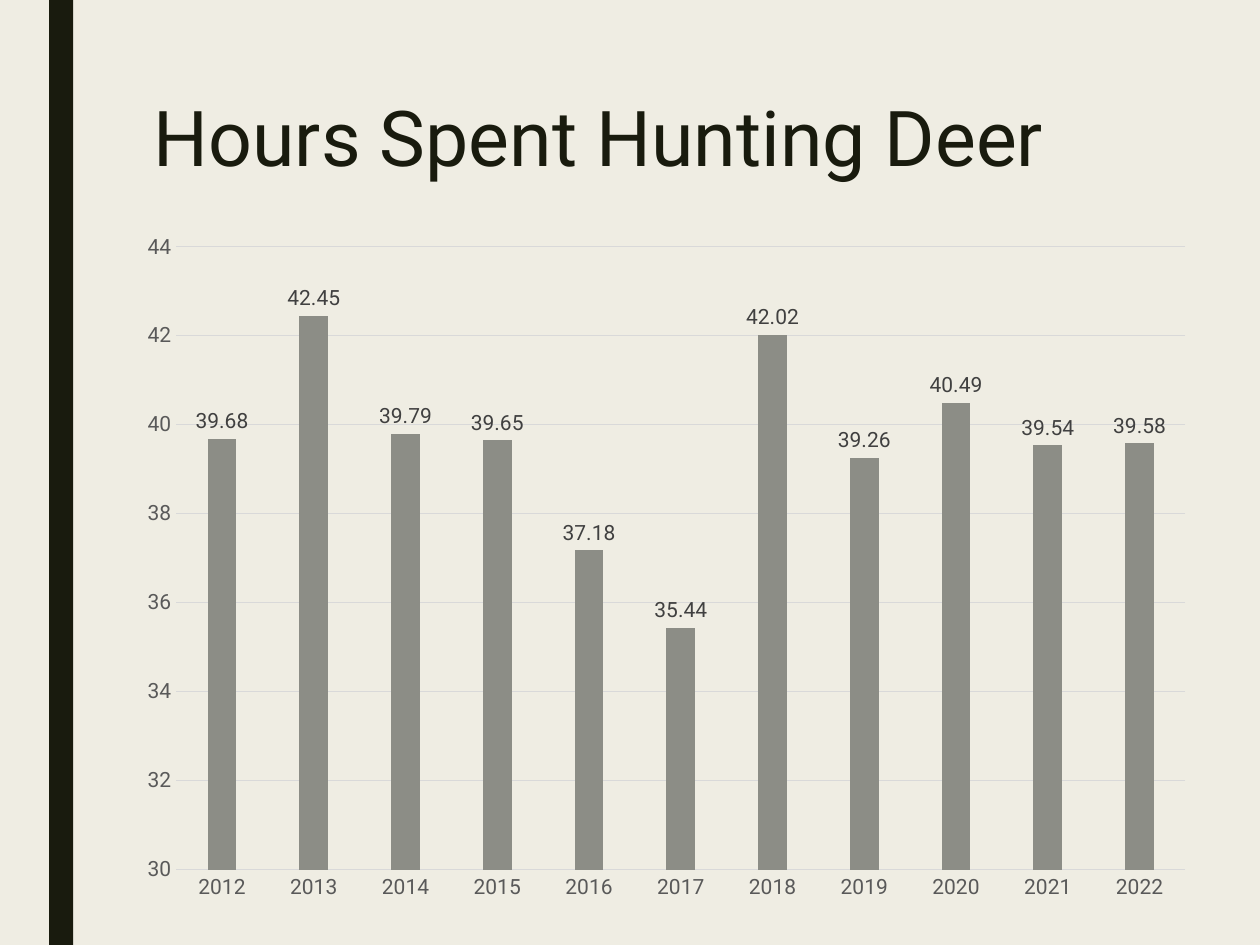
from dataclasses import dataclass

from pptx import Presentation
from pptx.chart.data import CategoryChartData
from pptx.dml.color import RGBColor
from pptx.enum.chart import XL_CHART_TYPE, XL_LABEL_POSITION, XL_TICK_MARK
from pptx.enum.shapes import MSO_SHAPE
from pptx.enum.text import MSO_ANCHOR, PP_ALIGN
from pptx.util import Inches, Pt

RECTANGLE = MSO_SHAPE.RECTANGLE
COLUMNS = XL_CHART_TYPE.COLUMN_CLUSTERED
OUTSIDE_END = XL_LABEL_POSITION.OUTSIDE_END
NO_TICK = XL_TICK_MARK.NONE
TITLE_ONLY = 5


@dataclass(frozen=True)
class Theme:
    font: str = "Roboto"
    background: RGBColor = RGBColor.from_string("EFEDE3")
    dark: RGBColor = RGBColor.from_string("191B0E")
    column: RGBColor = RGBColor.from_string("8C8D86")
    grid: RGBColor = RGBColor.from_string("D9D9D9")
    axis_text: RGBColor = RGBColor.from_string("595959")
    label_text: RGBColor = RGBColor.from_string("404040")
    black: RGBColor = RGBColor.from_string("000000")
    title_size: Pt = Pt(44)
    label_size: Pt = Pt(12)
    chart_size: Pt = Pt(10)
    grid_width: Pt = Pt(0.75)


THEME = Theme()

FIRST_YEAR = 2012
HOURS = [39.68, 42.45, 39.79, 39.65, 37.18, 35.44,
         42.02, 39.26, 40.49, 39.54, 39.58]


def box(left, top, width, height):
    return Inches(left), Inches(top), Inches(width), Inches(height)


def style_font(font, size, color):
    font.name = THEME.font
    font.size = size
    font.color.rgb = color
    font.bold = False


def style_line(line):
    line.color.rgb = THEME.grid
    line.width = THEME.grid_width


def add_stripe(page, bounds):
    stripe = page.shapes.add_shape(RECTANGLE, *bounds)
    stripe.shadow.inherit = False
    stripe.fill.solid()
    stripe.fill.fore_color.rgb = THEME.dark
    stripe.line.fill.background()


def set_title(page, bounds, text):
    title = page.shapes.title
    title.left, title.top, title.width, title.height = bounds
    frame = title.text_frame
    frame.text = text
    frame.word_wrap = True
    frame.vertical_anchor = MSO_ANCHOR.TOP
    para = frame.paragraphs[0]
    para.alignment = PP_ALIGN.LEFT
    para.line_spacing = 0.89
    style_font(para.font, THEME.title_size, THEME.dark)


def add_hours_chart(page, bounds):
    data = CategoryChartData()
    data.categories = [str(FIRST_YEAR + index) for index in range(len(HOURS))]
    data.add_series("Series 1", HOURS)
    chart = page.shapes.add_chart(COLUMNS, *bounds, data).chart
    chart.has_title = False
    chart.has_legend = False
    style_font(chart.font, THEME.chart_size, THEME.black)

    plot = chart.plots[0]
    plot.vary_by_categories = False
    plot.gap_width = 219
    plot.overlap = -27
    fill = plot.series[0].format.fill
    fill.solid()
    fill.fore_color.rgb = THEME.column

    plot.has_data_labels = True
    labels = plot.data_labels
    labels.show_value = True
    labels.position = OUTSIDE_END
    style_font(labels.font, THEME.label_size, THEME.label_text)

    years, hours = chart.category_axis, chart.value_axis
    for axis in (years, hours):
        axis.major_tick_mark = axis.minor_tick_mark = NO_TICK
        style_font(axis.tick_labels.font, THEME.label_size, THEME.axis_text)
    style_line(years.format.line)
    hours.format.line.fill.background()
    hours.minimum_scale, hours.maximum_scale, hours.major_unit = 30, 44, 2
    hours.has_major_gridlines = True
    style_line(hours.major_gridlines.format.line)


def main():
    deck = Presentation()
    deck.slide_width, deck.slide_height = Inches(10), Inches(7.5)
    page = deck.slides.add_slide(deck.slide_layouts[TITLE_ONLY])
    page.background.fill.solid()
    page.background.fill.fore_color.rgb = THEME.background
    add_stripe(page, box(0.39, 0, 0.19, 7.5))
    set_title(page, box(1.12, 0.75, 7.88, 1.62), "Hours Spent Hunting Deer")
    add_hours_chart(page, box(1, 1.75, 8.58, 5.5))
    deck.save("out.pptx")


if __name__ == "__main__":
    main()
